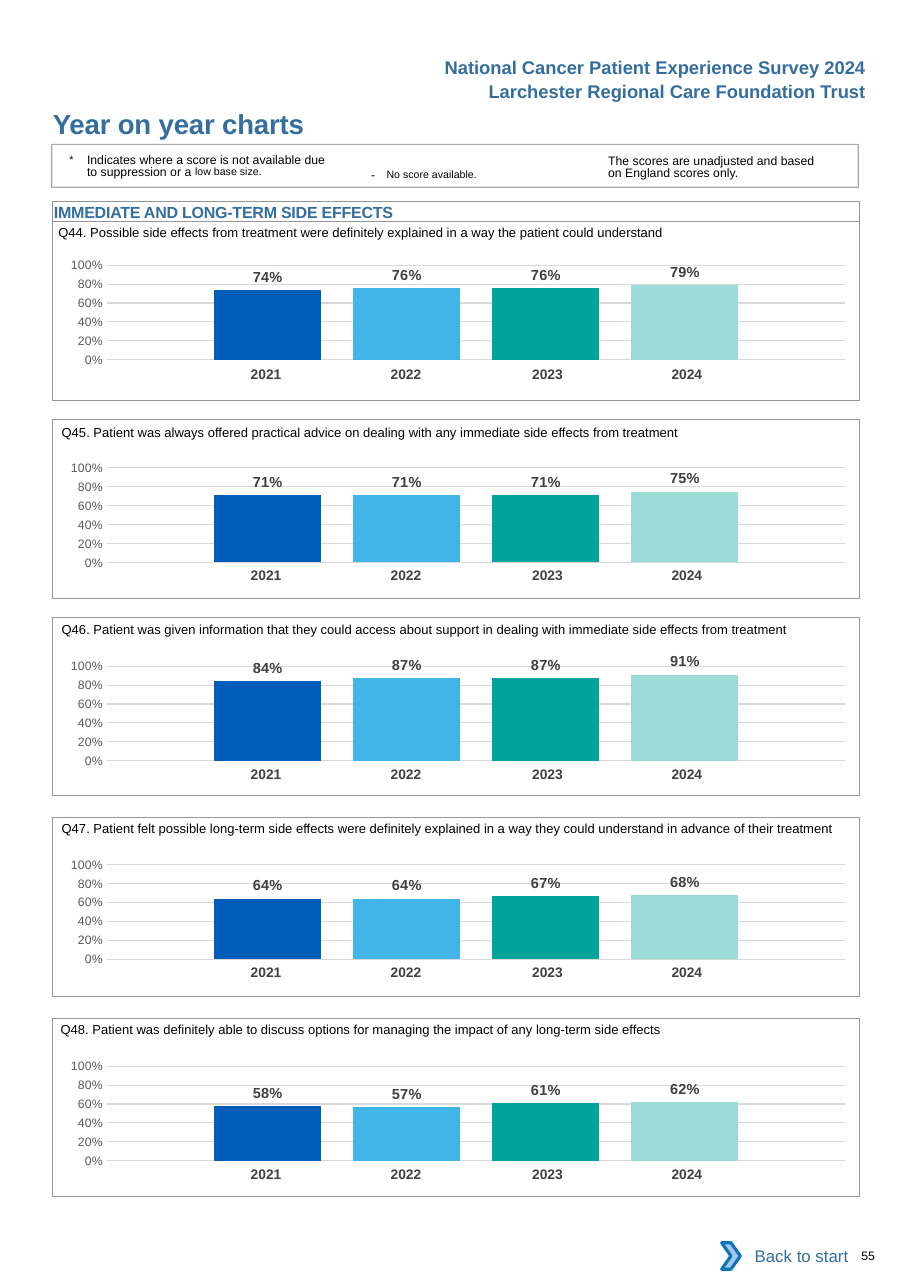
from lxml import etree
from pptx import Presentation
from pptx.chart.data import CategoryChartData
from pptx.dml.color import RGBColor
from pptx.enum.chart import XL_CHART_TYPE, XL_LABEL_POSITION, XL_TICK_MARK
from pptx.enum.shapes import MSO_SHAPE
from pptx.enum.text import MSO_ANCHOR, PP_ALIGN
from pptx.oxml import parse_xml
from pptx.oxml.ns import nsdecls, qn
from pptx.util import Pt

PX = 9144
COLUMN = XL_CHART_TYPE.COLUMN_CLUSTERED
OUTSIDE_END = XL_LABEL_POSITION.OUTSIDE_END
NO_TICK = XL_TICK_MARK.NONE
RECTANGLE, CHEVRON = MSO_SHAPE.RECTANGLE, MSO_SHAPE.CHEVRON
TOP, MIDDLE = MSO_ANCHOR.TOP, MSO_ANCHOR.MIDDLE
LEFT, CENTER, RIGHT = PP_ALIGN.LEFT, PP_ALIGN.CENTER, PP_ALIGN.RIGHT

BLACK = RGBColor(0x00, 0x00, 0x00)
WHITE = RGBColor(0xFF, 0xFF, 0xFF)
HEADING_BLUE = RGBColor(0x33, 0x6E, 0x9F)
BORDER_GREY = RGBColor(0x93, 0x95, 0x98)
YEAR_GREY = RGBColor(0x41, 0x40, 0x42)
LABEL_GREY = RGBColor(0x40, 0x40, 0x40)
AXIS_GREY = RGBColor(0x59, 0x59, 0x59)
GRID_GREY = RGBColor(0xD9, 0xD9, 0xD9)
CHEVRON_FILL = RGBColor(0xA8, 0xC7, 0xE9)
CHEVRON_LINE = RGBColor(0x0A, 0x74, 0xBB)
BAR_COLORS = [RGBColor(0x00, 0x5E, 0xB8), RGBColor(0x41, 0xB6, 0xE6),
              RGBColor(0x00, 0xA4, 0x99), RGBColor(0x9C, 0xDC, 0xD7)]

YEARS = ["2021", "2022", "2023", "2024"]
YEAR_WIDTHS = [127, 127, 134, 127]
YEAR_RIGHT_MARGINS = [0, 0, 4, 12]

QUESTIONS = [
    ("Q44. Possible side effects from treatment were definitely explained in a way the patient could understand",
     (53, 195), 201, 222, 328, [0.74, 0.76, 0.76, 0.79]),
    ("Q45. Patient was always offered practical advice on dealing with any immediate side effects from treatment",
     (56, 376), 381, 406, 511, [0.71, 0.71, 0.71, 0.75]),
    ("Q46. Patient was given information that they could access about support in dealing with immediate "
     "side effects from treatment",
     (56, 555), 560, 586, 691, [0.84, 0.87, 0.87, 0.91]),
    ("Q47. Patient felt possible long-term side effects were definitely explained in a way they could "
     "understand in advance of their treatment",
     (56, 736), 742, 766, 871, [0.64, 0.64, 0.67, 0.68]),
    ("Q48. Patient was definitely able to discuss options for managing the impact of any long-term side effects",
     (55, 918), 924, 949, 1054, [0.58, 0.57, 0.61, 0.62]),
]

presentation = Presentation()
presentation.slide_width = 826 * PX
presentation.slide_height = 1169 * PX
slide = presentation.slides.add_slide(presentation.slide_layouts[6])
shapes = slide.shapes


def write_text(holder, runs, color=BLACK, bold=False, align=LEFT, margins=(0, 0, 0, 0), anchor=TOP, wrap=True):
    frame = holder.text_frame
    frame.word_wrap = wrap
    frame.vertical_anchor = anchor
    frame.margin_left, frame.margin_top, frame.margin_right, frame.margin_bottom = [m * PX for m in margins]
    paragraph = frame.paragraphs[0]
    paragraph.alignment = align
    for text, size, attributes in runs:
        run = paragraph.add_run()
        run.text = text
        run.font.name = "Arial"
        run.font.size = Pt(size)
        run.font.bold = bold
        run.font.color.rgb = color
        for name, value in attributes.items():
            run.font._element.set(name, value)
    return paragraph


def add_box(kind, left, top, width, height, line=None, line_width=0.5, fill=None):
    shape = shapes.add_shape(kind, left * PX, top * PX, width * PX, height * PX)
    shape.shadow.inherit = False
    if fill is None:
        shape.fill.background()
    else:
        shape.fill.solid()
        shape.fill.fore_color.rgb = fill
    if line is None:
        shape.line.fill.background()
    else:
        shape.line.color.rgb = line
        shape.line.width = Pt(line_width)
    return shape


headers = [("National Cancer Patient Experience Survey 2024", 392, 46, 404),
           ("Larchester Regional Care Foundation Trust", 413, 68, 383)]
for header, left, top, width in headers:
    header_box = shapes.add_textbox(left * PX, top * PX, width * PX, 30 * PX)
    write_text(header_box, [(header, 12, {})], HEADING_BLUE, True, RIGHT, (10, 5, 10, 5), wrap=False)

title_box = shapes.add_textbox(47 * PX, 97 * PX, 450 * PX, 30 * PX)
write_text(title_box, [("Year on year charts", 18, {"spc": "-10"})], HEADING_BLUE, True, margins=(1, 0, 0, 0))

legend_frame = add_box(RECTANGLE, 47, 131, 732, 39, BORDER_GREY, 0.75)
legend_color = legend_frame.line._ln.find(".//" + qn("a:srgbClr"))
etree.SubElement(legend_color, qn("a:alpha")).set("val", "80000")

suppressed_box = shapes.add_textbox(63 * PX, 138 * PX, 238 * PX, 26 * PX)
suppressed = write_text(suppressed_box, [
    ("*\t", 12, {"baseline": "3000"}),
    ("Indicates where a score is not available due to suppression or a ", 8, {}),
    ("low base size.", 12, {"baseline": "7000"}),
], margins=(0, 3, 0, 0))
suppressed.line_spacing = Pt(8.1)
suppressed_properties = suppressed._p.get_or_add_pPr()
suppressed_properties.set("marL", str(16 * PX))
suppressed_properties.set("indent", str(-16 * PX))

missing_box = shapes.add_textbox(327 * PX, 141 * PX, 183 * PX, 24 * PX)
write_text(missing_box, [("- ", 8, {"spc": "260"}), ("No score available.", 12, {"baseline": "3000"})],
           margins=(10, 5, 10, 5))

unadjusted_box = shapes.add_textbox(552 * PX, 138 * PX, 201 * PX, 27 * PX)
unadjusted = write_text(unadjusted_box,
                        [("The scores are unadjusted and based on England scores only.", 8, {})],
                        margins=(0, 3, 0, 0))
unadjusted.line_spacing = Pt(8.1)

section_box = add_box(RECTANGLE, 48, 183, 732, 18, BORDER_GREY)
write_text(section_box, [("IMMEDIATE AND LONG-TERM SIDE EFFECTS", 10.5, {"spc": "-15"})],
           HEADING_BLUE, True, margins=(1, 1, 0, 0))

for question, (text_left, text_top), panel_top, chart_top, years_top, scores in QUESTIONS:
    add_box(RECTANGLE, 48, panel_top, 732, 162, BORDER_GREY)

    question_box = shapes.add_textbox(text_left * PX, text_top * PX, 724 * PX, 24 * PX)
    write_text(question_box, [(question, 8.5, {})], margins=(0, 9, 0, 0))

    chart_data = CategoryChartData(number_format="0%")
    chart_data.categories = ["1"]
    for number, score in enumerate(scores, 1):
        chart_data.add_series(f"Series {number}", [score])
    chart = shapes.add_chart(COLUMN, 39 * PX, chart_top * PX, 732 * PX, 129 * PX, chart_data).chart
    chart.has_legend = False
    chart.has_title = False
    chart.font.name = "Calibri"
    chart.font.size = Pt(10)
    chart.font.color.rgb = BLACK
    chart.category_axis.visible = False

    value_axis = chart.value_axis
    value_axis.minimum_scale, value_axis.maximum_scale, value_axis.major_unit = 0, 1, 0.2
    value_axis.major_tick_mark = NO_TICK
    value_axis.format.line.fill.background()
    value_axis.major_gridlines.format.line.color.rgb = GRID_GREY
    value_axis.major_gridlines.format.line.width = Pt(0.75)
    value_axis.tick_labels.number_format = "0%"
    value_axis.tick_labels.number_format_is_linked = False
    value_axis.tick_labels.font.name = "Arial"
    value_axis.tick_labels.font.size = Pt(8)
    value_axis.tick_labels.font.color.rgb = AXIS_GREY

    plot = chart.plots[0]
    plot.vary_by_categories = False
    plot.gap_width, plot.overlap = 200, -30
    for series, color in zip(plot.series, BAR_COLORS):
        series.format.fill.solid()
        series.format.fill.fore_color.rgb = color
        labels = series.data_labels
        labels.show_value = True
        labels.position = OUTSIDE_END
        labels.number_format = "0%"
        labels.number_format_is_linked = False
        labels.font.name = "Arial"
        labels.font.size = Pt(9.5)
        labels.font.bold = True
        labels.font.color.rgb = LABEL_GREY

    plot_area = chart._chartSpace.chart.plotArea
    for layout in plot_area.findall(qn("c:layout")):
        plot_area.remove(layout)
    plot_area.insert(0, parse_xml(
        f'<c:layout {nsdecls("c")}><c:manualLayout><c:layoutTarget val="inner"/>'
        '<c:xMode val="edge"/><c:yMode val="edge"/><c:x val="0.08"/><c:y val="0.145"/>'
        '<c:w val="0.915"/><c:h val="0.666"/></c:manualLayout></c:layout>'))

    table = shapes.add_table(1, 4, 173 * PX, years_top * PX, sum(YEAR_WIDTHS) * PX, 27 * PX).table
    table.first_row = False
    table.horz_banding = False
    table.rows[0].height = 27 * PX
    for column, (year, width, right_margin) in enumerate(zip(YEARS, YEAR_WIDTHS, YEAR_RIGHT_MARGINS)):
        table.columns[column].width = width * PX
        cell = table.cell(0, column)
        cell.fill.background()
        cell.margin_left, cell.margin_right = 10 * PX, right_margin * PX
        cell.margin_top = cell.margin_bottom = 5 * PX
        paragraph = cell.text_frame.paragraphs[0]
        paragraph.alignment = CENTER
        run = paragraph.add_run()
        run.text = year
        run.font.name = "Arial"
        run.font.size = Pt(9)
        run.font.bold = True
        run.font.color.rgb = YEAR_GREY
        for side in ("a:lnL", "a:lnR", "a:lnT", "a:lnB"):
            border = etree.Element(qn(side), w="0")
            etree.SubElement(border, qn("a:noFill"))
            cell._tc.tcPr.insert(len(cell._tc.tcPr) - 1, border)

back_box = add_box(RECTANGLE, 662, 1119, 118, 42, fill=WHITE)
write_text(back_box, [("Back to start", 11, {})], HEADING_BLUE, align=RIGHT, margins=(10, 5, 10, 5), anchor=MIDDLE)
add_box(CHEVRON, 655, 1128, 17, 24, CHEVRON_LINE, 2, CHEVRON_FILL)

page_number_box = shapes.add_textbox(772 * PX, 1133 * PX, 51 * PX, 13 * PX)
write_text(page_number_box, [("55", 8, {})], margins=(10, 0, 0, 0))

presentation.save("out.pptx")
